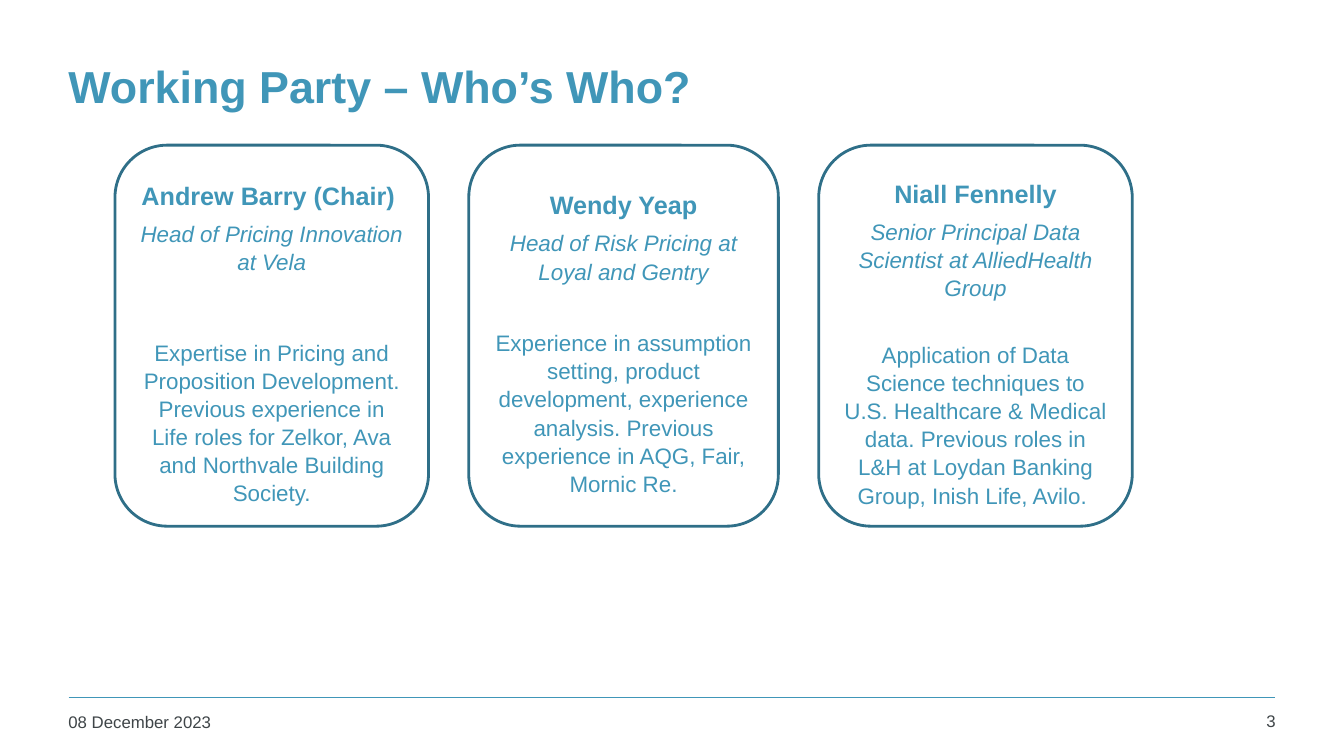
from pptx import Presentation
from pptx.dml.color import RGBColor
from pptx.enum import shapes, text
from pptx.oxml.ns import qn
from pptx.util import Inches, Pt
from lxml import etree

COLORS = {"blue": "4096B8", "edge": "2F6F88", "grey": "3F4548", "white": "FFFFFF"}
MID = text.PP_ALIGN.CENTER

prs = Presentation()
prs.slide_width, prs.slide_height = Inches(13.33), Inches(7.5)
slide = prs.slides.add_slide(prs.slide_layouts[6])


def rgb(name):
    return RGBColor.from_string(COLORS[name])


def add_run(para, words, size, color="blue", bold=False, italic=False):
    run = para.add_run()
    run.text = words
    font = run.font
    font.name, font.size, font.bold, font.italic = "Arial", Pt(size), bold, italic
    font.color.rgb = rgb(color)


# Footer rule
rule = slide.shapes.add_connector(
    shapes.MSO_CONNECTOR.STRAIGHT, Inches(0.68), Inches(6.92), Inches(12.65), Inches(6.92))
rule.line.color.rgb = rgb("blue")
rule.line.width = Pt(1)
etree.SubElement(rule._element.spPr, qn("a:effectLst"))

# Title, date and page number
labels = [
    ("Working Party – Who’s Who?", (0.58, 0.22, 12.09, 1.25), 32, "blue", True,
     text.PP_ALIGN.LEFT, text.MSO_ANCHOR.MIDDLE),
    ("08 December 2023", (0.58, 7.01, 2.94, 0.36), 12, "grey", False,
     text.PP_ALIGN.LEFT, text.MSO_ANCHOR.TOP),
    ("3", (11.81, 7, 0.94, 0.37), 12, "grey", False,
     text.PP_ALIGN.RIGHT, text.MSO_ANCHOR.TOP),
]
for words, place, size, color, bold, align, anchor in labels:
    frame = slide.shapes.add_textbox(*map(Inches, place)).text_frame
    frame.word_wrap = True
    frame.vertical_anchor = anchor
    para = frame.paragraphs[0]
    para.alignment = align
    add_run(para, words, size, color, bold)

# Member cards: left, width, name, role, gap below role in points, profile
members = [
    (1.14, 3.11, "Andrew Barry (Chair) ", "Head of Pricing Innovation at Vela", 44.5,
     "Expertise in Pricing and Proposition Development. Previous experience in "
     "Life roles for Zelkor, Ava and Northvale Building Society."),
    (4.65, 3.07, "Wendy Yeap", "Head of Risk Pricing at Loyal and Gentry", 31,
     "Experience in assumption setting, product development, experience "
     "analysis. Previous experience in AQG, Fair, Mornic Re."),
    (8.12, 3.11, "Niall Fennelly", "Senior Principal Data Scientist at AlliedHealth Group", 27.5,
     "Application of Data Science techniques to U.S. Healthcare & Medical data. "
     "Previous roles in L&H at Loydan Banking Group, Inish Life, Avilo. "),
]
for left, width, name, role, gap, profile in members:
    card = slide.shapes.add_shape(
        shapes.MSO_SHAPE.ROUNDED_RECTANGLE,
        Inches(left), Inches(1.44), Inches(width), Inches(3.78))
    card.shadow.inherit = False
    card.fill.solid()
    card.fill.fore_color.rgb = rgb("white")
    card.line.color.rgb = rgb("edge")
    card.line.width = Pt(2)
    frame = card.text_frame
    frame.word_wrap = True
    frame.vertical_anchor = text.MSO_ANCHOR.MIDDLE
    parts = [(name, 18, True, False, 1.5, 6),
             (role, 16, False, True, 1.05, gap),
             (profile, 16, False, False, 1.05, 0)]
    for i, (words, size, bold, italic, pitch, after) in enumerate(parts):
        para = frame.add_paragraph() if i else frame.paragraphs[0]
        para.alignment = MID
        para.line_spacing = pitch
        para.space_after = Pt(after)
        add_run(para, words, size, bold=bold, italic=italic)

prs.save("out.pptx")
